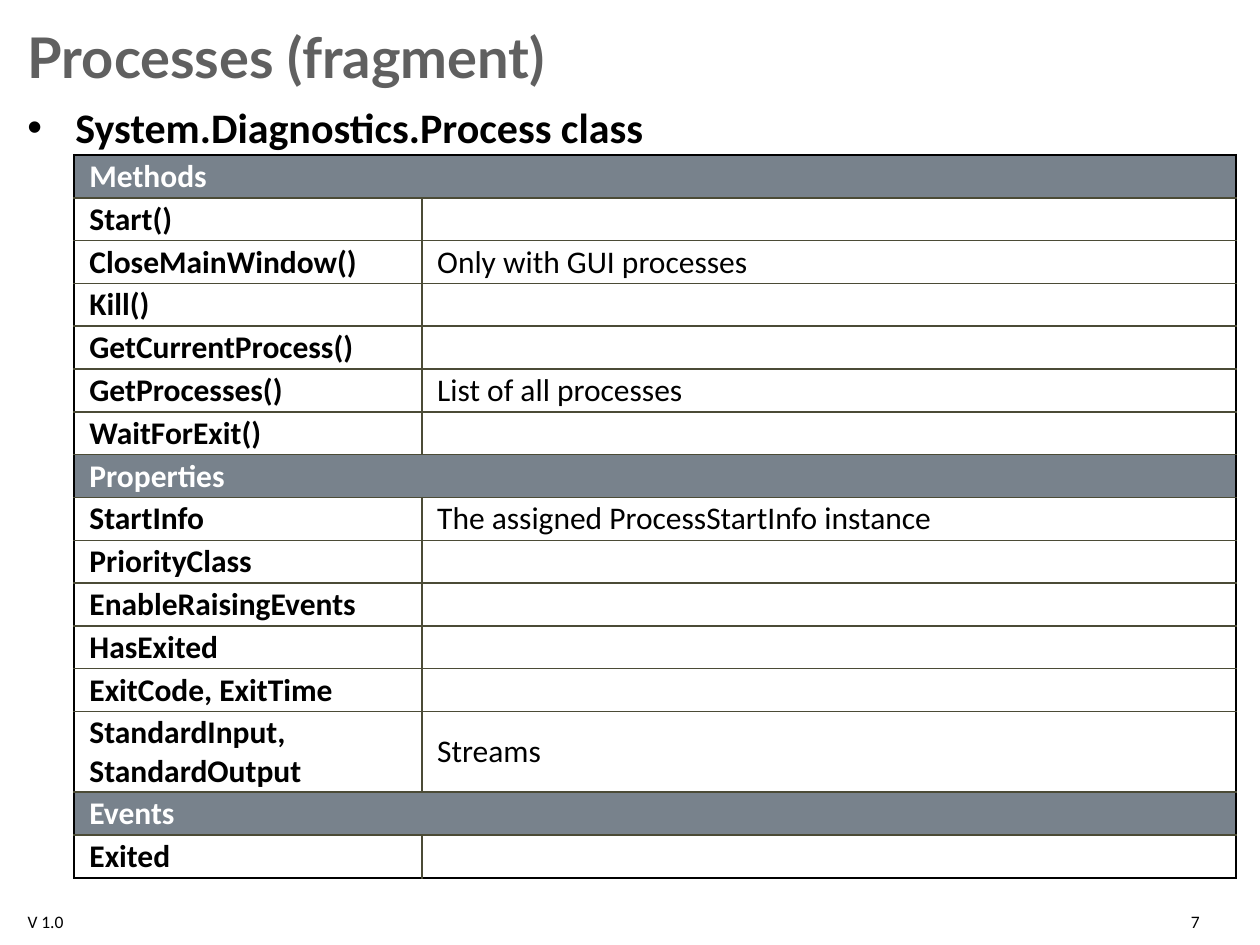
import pptx
import pptx.util
import pptx.dml.color
import pptx.enum.text
from lxml import etree
from pptx.oxml.ns import qn

Inches, Pt = pptx.util.Inches, pptx.util.Pt
RGBColor = pptx.dml.color.RGBColor
PP_ALIGN = pptx.enum.text.PP_ALIGN
ANCHOR = pptx.enum.text.MSO_ANCHOR

BLACK = RGBColor(0x00, 0x00, 0x00)
WHITE = RGBColor(0xFF, 0xFF, 0xFF)
TITLE_GRAY = RGBColor(0x60, 0x60, 0x60)
SECTION_GRAY = RGBColor(0x78, 0x82, 0x8C)
GRID_OLIVE = RGBColor(0x4B, 0x4B, 0x36)

OUTER_EDGE = (BLACK, 1.5)
INNER_EDGE = (GRID_OLIVE, 1)

TITLE = "Processes (fragment)"
TOPIC = "System.Diagnostics.Process class"
VERSION = "V 1.0"
PAGE_NUMBER = "7"
SECTIONS = [
    ("Methods", [
        ("Start()", ""),
        ("CloseMainWindow()", "Only with GUI processes"),
        ("Kill()", ""),
        ("GetCurrentProcess()", ""),
        ("GetProcesses()", "List of all processes"),
        ("WaitForExit()", ""),
    ]),
    ("Properties", [
        ("StartInfo", "The assigned ProcessStartInfo instance"),
        ("PriorityClass", ""),
        ("EnableRaisingEvents", ""),
        ("HasExited", ""),
        ("ExitCode, ExitTime", ""),
        ("StandardInput, StandardOutput", "Streams"),
    ]),
    ("Events", [
        ("Exited", ""),
    ]),
]

SLIDE_WIDTH, SLIDE_HEIGHT = 10, 7.5
MARGIN = 0.12
CONTENT_WIDTH = SLIDE_WIDTH - 2 * MARGIN
FOOTER_TOP, FOOTER_HEIGHT = 7.18, 0.2
TABLE_LEFT, TABLE_TOP = 0.59, 1.23
COLUMN_WIDTHS = (2.76, 6.46)
ROW_HEIGHT, TWO_LINE_HEIGHT = 0.34, 0.64
TWO_LINE_LENGTH = 25


def write(frame, text, size=18, color=BLACK, bold=False, font="Calibri",
          align=PP_ALIGN.LEFT, anchor=ANCHOR.TOP, bullet=None, indent=0.38):
    frame.word_wrap = True
    frame.vertical_anchor = anchor
    paragraph = frame.paragraphs[0]
    paragraph.alignment = align
    if bullet:
        properties = paragraph._p.get_or_add_pPr()
        properties.set("marL", str(Inches(indent)))
        properties.set("indent", str(-Inches(indent)))
        etree.SubElement(properties, qn("a:buFont")).set("typeface", "Arial")
        etree.SubElement(properties, qn("a:buChar")).set("char", bullet)
    run = paragraph.add_run()
    run.text = text
    run.font.name, run.font.size, run.font.bold = font, Pt(size), bold
    run.font.color.rgb = color


def add_text(slide, text, left, top, width, height, **style):
    box = slide.shapes.add_textbox(*map(Inches, (left, top, width, height)))
    write(box.text_frame, text, **style)


def set_borders(cell, **edges):
    properties = cell._tc.get_or_add_tcPr()
    for side in "LRTB":
        color, width = edges[side]
        line = etree.SubElement(properties, qn(f"a:ln{side}"), w=str(Pt(width)))
        fill = etree.SubElement(line, qn("a:solidFill"))
        etree.SubElement(fill, qn("a:srgbClr"), val=str(color))


def add_member_table(slide):
    rows = []
    for section, members in SECTIONS:
        rows.append((section, None))
        rows.extend(members)
    heights = [TWO_LINE_HEIGHT if len(name) > TWO_LINE_LENGTH else ROW_HEIGHT
               for name, _ in rows]
    table = slide.shapes.add_table(
        len(rows), 2, Inches(TABLE_LEFT), Inches(TABLE_TOP),
        Inches(sum(COLUMN_WIDTHS)), Inches(sum(heights))).table
    table.first_row = table.horz_banding = False
    for column, width in zip(table.columns, COLUMN_WIDTHS):
        column.width = Inches(width)

    for r, (name, note) in enumerate(rows):
        table.rows[r].height = Inches(heights[r])
        is_section = note is None
        if is_section:
            table.cell(r, 0).merge(table.cell(r, 1))
        for c, text in enumerate((name, note)):
            cell = table.cell(r, c)
            cell.margin_left, cell.margin_right = Inches(MARGIN), 0
            cell.margin_top = cell.margin_bottom = Inches(0.02)
            cell.vertical_anchor = ANCHOR.MIDDLE
            set_borders(
                cell,
                L=OUTER_EDGE if c == 0 else INNER_EDGE,
                R=OUTER_EDGE if c == 1 or is_section else INNER_EDGE,
                T=OUTER_EDGE if r == 0 else INNER_EDGE,
                B=OUTER_EDGE if r == len(rows) - 1 else INNER_EDGE)
            if is_section:
                cell.fill.solid()
                cell.fill.fore_color.rgb = SECTION_GRAY
            else:
                cell.fill.background()
            if text:
                write(cell.text_frame, text, bold=c == 0, anchor=ANCHOR.MIDDLE,
                      color=WHITE if is_section else BLACK)


def main():
    deck = pptx.Presentation()
    deck.slide_width, deck.slide_height = Inches(SLIDE_WIDTH), Inches(SLIDE_HEIGHT)
    slide = deck.slides.add_slide(deck.slide_layouts[6])

    add_text(slide, VERSION, MARGIN, FOOTER_TOP, 0.79, FOOTER_HEIGHT, size=10)
    add_text(slide, TITLE, MARGIN, 0.13, CONTENT_WIDTH, 0.63, size=32, bold=True,
             color=TITLE_GRAY, font="Lato", anchor=ANCHOR.MIDDLE)
    add_text(slide, TOPIC, MARGIN, 0.76, CONTENT_WIDTH, 6.3, size=24, bold=True,
             bullet="•")
    add_member_table(slide)
    add_text(slide, PAGE_NUMBER, 8.31, FOOTER_TOP, 1.31, FOOTER_HEIGHT, size=10,
             align=PP_ALIGN.RIGHT)
    deck.save("out.pptx")


if __name__ == "__main__":
    main()
